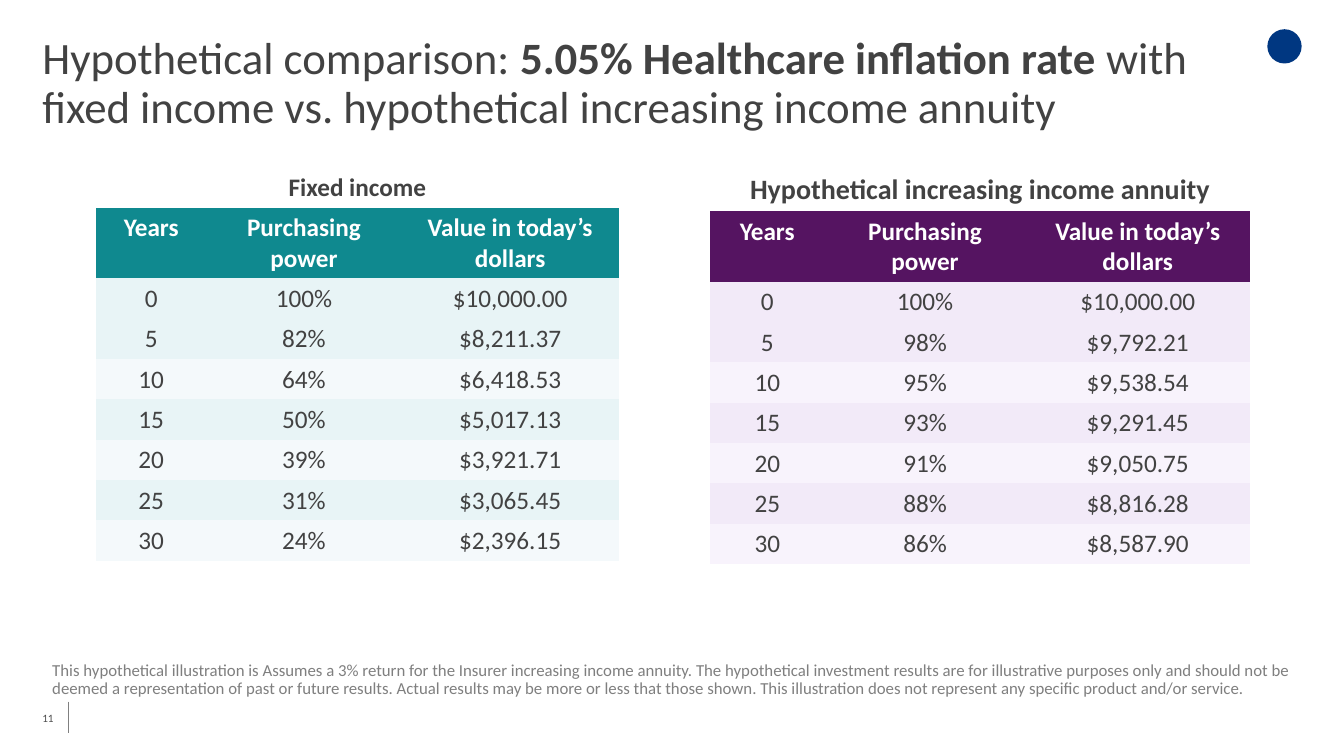
from pptx import Presentation
from pptx.dml.color import RGBColor
from pptx.enum.shapes import MSO_CONNECTOR, MSO_SHAPE
from pptx.enum.text import MSO_ANCHOR, PP_ALIGN
from pptx.oxml.ns import qn
from pptx.util import Inches, Pt
from lxml.etree import SubElement

FONT = "Calibri"
INK = "424242"
WHITE = "FFFFFF"
NO_GRID_STYLE = "{2D5ABB26-0587-4C30-8999-92F81FD0307C}"

HEADINGS = ["Years", "Purchasing power", "Value in today’s dollars"]
YEARS = range(0, 31, 5)
FIXED = [
    ("100%", "$10,000.00"), ("82%", "$8,211.37"), ("64%", "$6,418.53"),
    ("50%", "$5,017.13"), ("39%", "$3,921.71"), ("31%", "$3,065.45"),
    ("24%", "$2,396.15"),
]
INCREASING = [
    ("100%", "$10,000.00"), ("98%", "$9,792.21"), ("95%", "$9,538.54"),
    ("93%", "$9,291.45"), ("91%", "$9,050.75"), ("88%", "$8,816.28"),
    ("86%", "$8,587.90"),
]
TITLE = [
    ("Hypothetical comparison: ", False),
    ("5.05% Healthcare inflation rate ", True),
    ("with fixed income vs. hypothetical increasing income annuity", False),
]
DISCLAIMER = (
    "This hypothetical illustration is Assumes a 3% return for the Insurer "
    "increasing income annuity. The hypothetical investment results are for "
    "illustrative purposes only and should not be deemed a representation of "
    "past or future results. Actual results may be more or less that those "
    "shown. This illustration does not represent any specific product and/or "
    "service."
)


def rgb(value):
    return RGBColor.from_string(value)


class SlideBuilder:
    def __init__(self, slide):
        self.slide = slide

    def style(self, paragraph, size, color, bold=None):
        font = paragraph.font
        font.name, font.size, font.bold = FONT, Pt(size), bold
        font.color.rgb = rgb(color)

    def text(self, box, runs, size, color, spacing=1.0, anchor=MSO_ANCHOR.TOP,
             insets=(0.1, 0.05)):
        """Add wrapped text; runs are (words, bold) pairs, insets are (x, y)."""
        frame = self.slide.shapes.add_textbox(*map(Inches, box)).text_frame
        frame.word_wrap = True
        frame.vertical_anchor = anchor
        frame.margin_left = frame.margin_right = Inches(insets[0])
        frame.margin_top = frame.margin_bottom = Inches(insets[1])
        paragraph = frame.paragraphs[0]
        paragraph.line_spacing = spacing
        self.style(paragraph, size, color)
        for words, bold in runs:
            run = paragraph.add_run()
            run.text = words
            if bold:
                run.font.bold = True

    def rule(self, start, end, color):
        line = self.slide.shapes.add_connector(
            MSO_CONNECTOR.STRAIGHT, *map(Inches, start + end))
        line.line.color.rgb = rgb(color)
        line.line.width = Pt(0.75)
        SubElement(line._element.spPr, qn("a:effectLst"))

    def disc(self, box, color):
        disc = self.slide.shapes.add_shape(MSO_SHAPE.OVAL, *map(Inches, box))
        disc.shadow.inherit = False
        disc.fill.solid()
        disc.fill.fore_color.rgb = rgb(color)
        disc.line.fill.background()

    def cell(self, cell, words, size, color, bold, fill=None):
        cell.text = words
        paragraph = cell.text_frame.paragraphs[0]
        paragraph.alignment = PP_ALIGN.CENTER
        self.style(paragraph, size, color, bold)
        if fill:
            cell.fill.solid()
            cell.fill.fore_color.rgb = rgb(fill)
        else:
            cell.fill.background()

    def income_table(self, left, widths, caption, caption_size, values,
                     head_fill, bands):
        """Add a captioned table with one row per year and two band colours."""
        # Rows grow slightly to fit their text
        heights = [0.4, 0.7] + [0.4] * len(values)
        table = self.slide.shapes.add_table(
            len(heights), len(widths), Inches(left), Inches(1.66),
            Inches(sum(widths)), Inches(sum(heights))).table
        table.first_row = table.horz_banding = False
        table._tbl.tblPr.find(qn("a:tableStyleId")).text = NO_GRID_STYLE
        for column, width in zip(table.columns, widths):
            column.width = Inches(width)
        for row, height in zip(table.rows, heights):
            row.height = Inches(height)

        table.cell(0, 0).merge(table.cell(0, len(widths) - 1))
        self.cell(table.cell(0, 0), caption, caption_size, INK, True)
        for col, heading in enumerate(HEADINGS):
            self.cell(table.cell(1, col), heading, 18, WHITE, True, head_fill)
        for index, (year, entry) in enumerate(zip(YEARS, values)):
            # Year 0 shares the darker band with year 5
            fill = bands[1] if index and index % 2 == 0 else bands[0]
            for col, words in enumerate((str(year), *entry)):
                self.cell(table.cell(index + 2, col), words, 18, INK, False, fill)


def main():
    deck = Presentation()
    deck.slide_width, deck.slide_height = Inches(13.33), Inches(7.5)
    page = SlideBuilder(deck.slides.add_slide(deck.slide_layouts[6]))

    page.disc((12.57, 0.29, 0.34, 0.34), "003781")
    page.rule((0.68, 6.96), (0.68, 7.27), "808080")
    page.text((0.42, 0.43, 11.99, 0.89), TITLE, 32, INK, 0.9,
              MSO_ANCHOR.BOTTOM, (0, 0))
    page.text((0.42, 6.92, 0.4, 0.4), [("11", False)], 8, "4D4D4D",
              anchor=MSO_ANCHOR.MIDDLE, insets=(0, 0.06))
    page.income_table(0.95, (1.1, 1.93, 2.16), "Fixed income", 18, FIXED,
                      "0F898F", ("E8F4F6", "F4F9FB"))
    page.income_table(7.04, (1.14, 1.99, 2.23),
                      "Hypothetical increasing income annuity", 20, INCREASING,
                      "551461", ("F2EAF8", "F8F3FC"))
    page.text((0.42, 6.52, 12.56, 0.4), [(DISCLAIMER, False)], 12, "7F7F7F", 0.9)
    deck.save("out.pptx")


if __name__ == "__main__":
    main()
